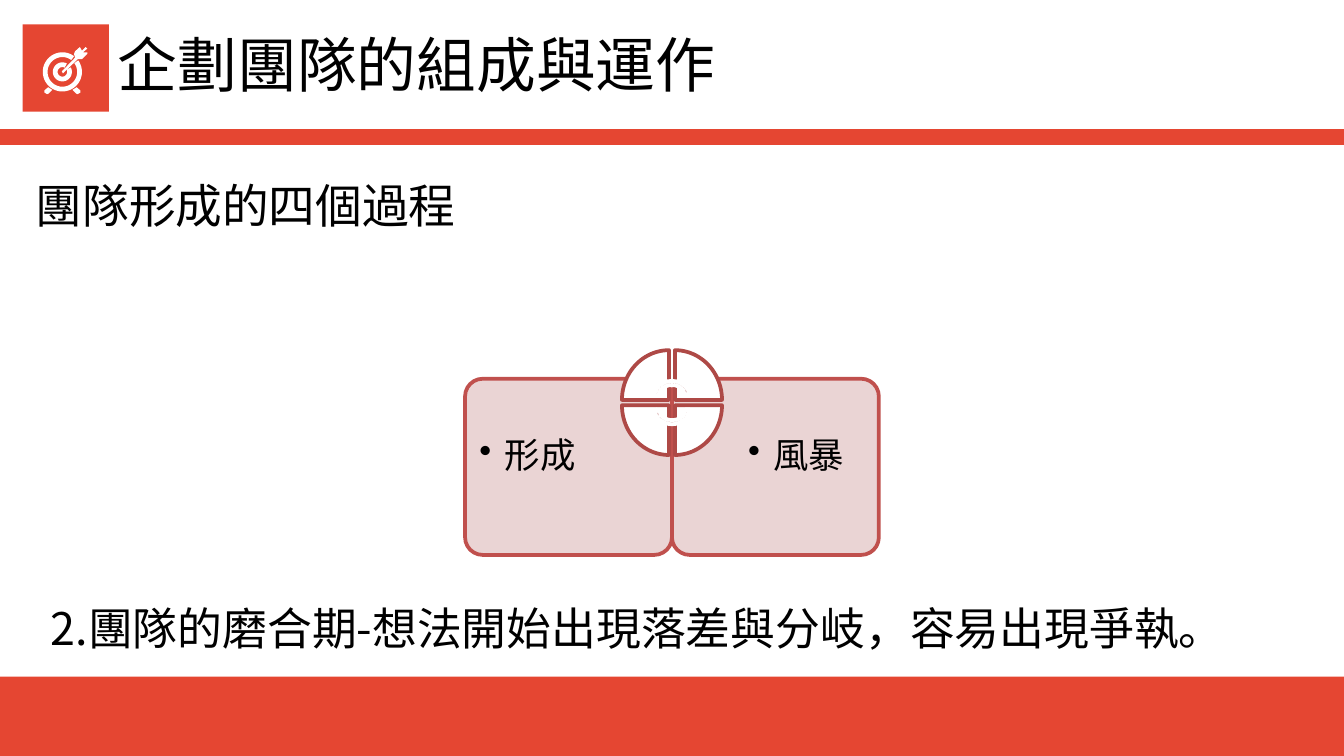
from math import cos, radians, sin

from lxml.etree import SubElement
from pptx import Presentation
from pptx.dml.color import RGBColor
from pptx.enum.shapes import MSO_SHAPE as SHAPE
from pptx.enum.text import MSO_ANCHOR as ANCHOR
from pptx.oxml.ns import qn
from pptx.util import Cm, Pt

FONT = "Noto Sans CJK JP"
RED, WHITE, BLACK = "E54632", "FFFFFF", "000000"
CARD, CARD_EDGE, WEDGE_EDGE, ARROW = "E8D0D0", "C0504D", "AE4946", "DCB3B2"
TARGET_X, TARGET_Y = 1.18, 1.36
MIDDLE_X, WHEEL_Y = 12.7, 7.61


def rgb(color):
    return RGBColor.from_string(color)


def paint(s, fill, edge=None):
    s.shadow.inherit = False
    s.fill.solid()
    s.fill.fore_color.rgb = rgb(fill)
    if edge:
        s.line.color.rgb = rgb(edge)
        s.line.width = Pt(2)
    else:
        s.line.fill.background()


def add_box(slide, kind, x, y, w, h, fill, edge=None, turn=0):
    s = slide.shapes.add_shape(kind, Cm(x), Cm(y), Cm(w), Cm(h))
    s.rotation = turn
    paint(s, fill, edge)
    return s


def add_outline(slide, points, fill):
    """Closed polygon through points given in centimetres."""
    points = [(Cm(x), Cm(y)) for x, y in points]
    builder = slide.shapes.build_freeform(*points[0])
    builder.add_line_segments(points[1:], close=True)
    paint(builder.convert_to_shape(), fill)


def add_text(slide, text, x, y, w, h, size, inset=(0.25, 0.25), anchor=ANCHOR.MIDDLE):
    s = slide.shapes.add_textbox(Cm(x), Cm(y), Cm(w), Cm(h))
    tf = s.text_frame
    tf.word_wrap = True
    tf.vertical_anchor = anchor
    tf.margin_left = tf.margin_right = Cm(inset[0])
    tf.margin_top = tf.margin_bottom = Cm(inset[1])
    p = tf.paragraphs[0]
    r = p.add_run()
    r.text = text
    r.font.size = Pt(size)
    r.font.name = FONT
    r.font.color.rgb = rgb(BLACK)
    SubElement(r.font._element, qn("a:ea"), typeface=FONT)
    return p


def add_bullet(p, indent):
    p.line_spacing = 0.9
    pPr = p._p.get_or_add_pPr()
    pPr.set("marL", str(Cm(indent)))
    pPr.set("indent", str(-Cm(indent)))
    SubElement(pPr, qn("a:buChar"), char="•")


def add_open_ring(slide, outer, inner, start, end):
    """Ring around the target's centre, drawn between two angles in degrees."""
    steps = 48
    angles = [radians(start + (end - start) * i / steps) for i in range(steps + 1)]
    edge = [(outer, a) for a in angles] + [(inner, a) for a in reversed(angles)]
    add_outline(slide, [(TARGET_X + r * cos(a), TARGET_Y + r * sin(a)) for r, a in edge], WHITE)


def add_target_icon(slide):
    add_box(slide, SHAPE.RECTANGLE, 0.43, 0.46, 1.63, 1.65, RED)
    add_open_ring(slide, 0.37, 0.28, -36, 307)
    add_open_ring(slide, 0.18, 0.09, -28, 298)
    foot = [(0.91, 1.65), (0.84, 1.71), (0.84, 1.75), (0.89, 1.78), (0.92, 1.77), (0.99, 1.7)]
    add_outline(slide, foot, WHITE)
    add_outline(slide, [(2 * TARGET_X - x, y) for x, y in foot], WHITE)
    dart = [(1.51, 0.89), (1.42, 0.97), (1.4, 1.02), (1.42, 1.09), (1.17, 1.35),
            (1.19, 1.39), (1.47, 1.12), (1.55, 1.12), (1.65, 1.02), (1.65, 0.99),
            (1.57, 0.99), (1.65, 0.92), (1.62, 0.89), (1.55, 0.96)]
    add_outline(slide, dart, WHITE)


def add_card(slide, label, x, label_x):
    s = add_box(slide, SHAPE.ROUNDED_RECTANGLE, x, 7.16, 3.91, 3.33, CARD, CARD_EDGE)
    s.adjustments[0] = 0.1
    color = s.fill._xPr.find(qn("a:solidFill"))[0]
    SubElement(color, qn("a:alpha"), val="90000")
    p = add_text(slide, label, label_x, 8.08, 2.59, 2.34, 19, (0.2, 0.2), ANCHOR.TOP)
    add_bullet(p, 0.48)


def add_wheel(slide):
    """Four wedges turned clockwise from the top left, and two arrows at the hub."""
    for i, (dx, dy) in enumerate([(-1, -1), (1, -1), (1, 1), (-1, 1)]):
        w, h = (0.94, 0.89) if i % 2 else (0.89, 0.94)
        x, y = MIDDLE_X + 0.5 * dx, WHEEL_Y + 0.52 * dy
        add_box(slide, SHAPE.PIE_WEDGE, x - w / 2, y - h / 2, w, h, WHITE, WEDGE_EDGE, 90 * i)
    for y, turn in [(7.16, 0), (7.42, 180)]:
        add_box(slide, SHAPE.CIRCULAR_ARROW, MIDDLE_X - 0.37, y, 0.74, 0.64, ARROW, WHITE, turn)


def main():
    prs = Presentation()
    prs.slide_width, prs.slide_height = Cm(25.4), Cm(14.29)
    slide = prs.slides.add_slide(prs.slide_layouts[6])

    add_box(slide, SHAPE.RECTANGLE, 0, 12.79, 25.4, 1.5, RED)
    add_box(slide, SHAPE.RECTANGLE, 0, 2.44, 25.4, 0.3, RED)
    add_text(slide, "企劃團隊的組成與運作", 1.98, -0.03, 11.99, 2.46, 32)
    add_target_icon(slide)
    add_text(slide, "團隊形成的四個過程", 0.43, 2.95, 9.65, 1.83, 25)

    add_card(slide, "形成", MIDDLE_X - 3.91, 8.86)
    add_card(slide, "風暴", MIDDLE_X, 13.94)
    add_wheel(slide)
    add_text(slide, "2.團隊的磨合期-想法開始出現落差與分岐，容易出現爭執。",
             0.71, 11.23, 23.57, 1.27, 24, (0.25, 0.13), ANCHOR.TOP)
    prs.save("out.pptx")


if __name__ == "__main__":
    main()
